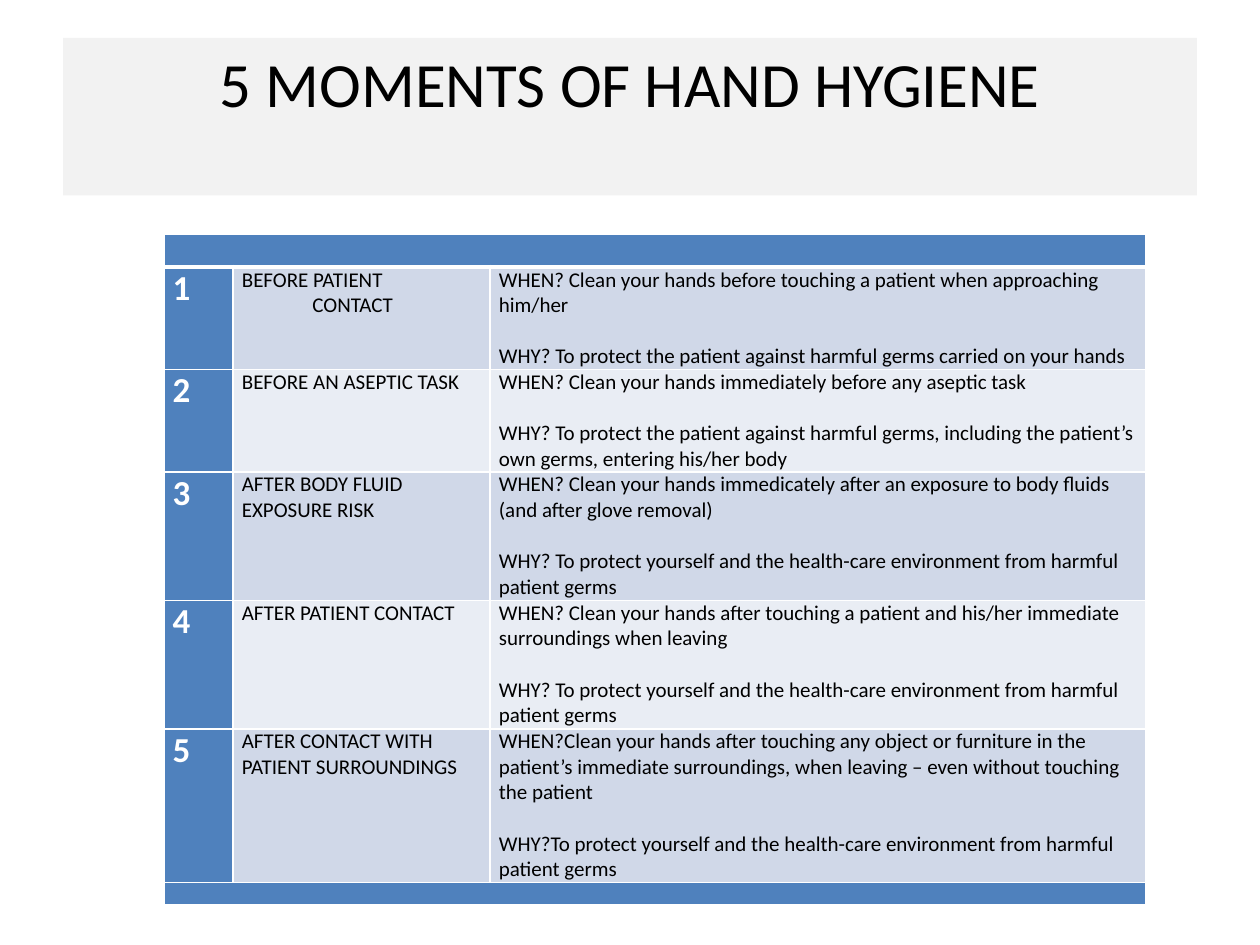
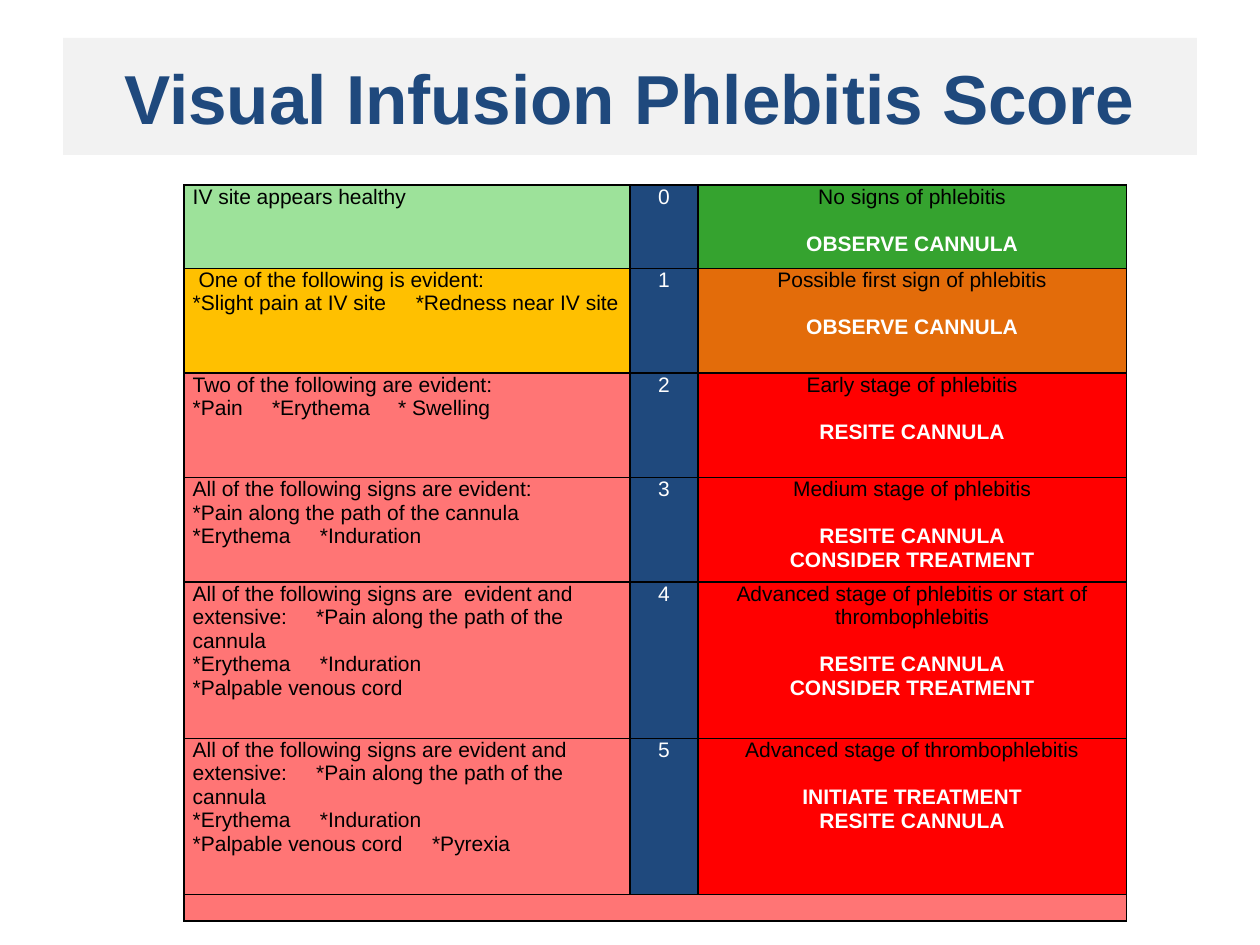
from dataclasses import dataclass

import lxml.etree
import pptx
import pptx.dml.color
import pptx.enum.text
import pptx.oxml.ns
import pptx.util

Inches = pptx.util.Inches
Pt = pptx.util.Pt
qn = pptx.oxml.ns.qn
Align = pptx.enum.text.PP_ALIGN
Anchor = pptx.enum.text.MSO_ANCHOR

COLORS = {
    "black": "000000", "white": "FFFFFF", "band": "F2F2F2",
    "blue": "4F81BD", "row_dark": "D0D8E8", "row_light": "E9EDF4",
    "navy": "1F497D", "light_green": "9DE29A", "green": "35A32F",
    "yellow": "FFC000", "orange": "E36C0A", "pink": "FF7575", "red": "FF0000",
}


@dataclass(frozen=True)
class Line:
    text: str
    color: str = "black"
    size: float = 12
    bold: bool = False
    gap: float = 0
    indent: float = 0
    stops: tuple[float, ...] = ()


@dataclass(frozen=True)
class Cell:
    fill: str
    lines: tuple[Line, ...] = ()
    align: Align = Align.LEFT


@dataclass(frozen=True)
class TableStyle:
    left: float
    top: float
    widths: tuple[float, ...]
    heights: tuple[float, ...]
    font: str
    border: str


@dataclass(frozen=True)
class Title:
    text: str
    height: float
    font: str
    size: float
    color: str
    bold: bool
    anchor: Anchor


def rgb(name: str) -> pptx.dml.color.RGBColor:
    return pptx.dml.color.RGBColor.from_string(COLORS[name])


def set_font(font, name: str, size: float, color: str, bold: bool) -> None:
    font.name, font.size, font.bold = name, Pt(size), bold
    font.color.rgb = rgb(color)


def add_titled_slide(presentation, title: Title):
    slide = presentation.slides.add_slide(presentation.slide_layouts[5])
    shape = slide.shapes.title
    shape.left, shape.top = Inches(0.5), Inches(0.3)
    shape.width, shape.height = Inches(9), Inches(title.height)
    shape.fill.solid()
    shape.fill.fore_color.rgb = rgb("band")
    frame = shape.text_frame
    frame.text = title.text
    frame.auto_size = pptx.enum.text.MSO_AUTO_SIZE.NONE
    frame.vertical_anchor = title.anchor
    paragraph = frame.paragraphs[0]
    paragraph.alignment = Align.CENTER
    set_font(paragraph.font, title.font, title.size, title.color, title.bold)
    return slide


def set_border(cell, side: str, color: str, width: float = 1) -> None:
    properties = cell._tc.get_or_add_tcPr()
    tag = qn(f"a:ln{side}")
    for old_line in properties.findall(tag):
        properties.remove(old_line)
    line = lxml.etree.Element(tag, w=str(Pt(width)))
    fill = lxml.etree.SubElement(line, qn("a:solidFill"))
    lxml.etree.SubElement(fill, qn("a:srgbClr"), val=COLORS[color])
    properties.insert("LRTB".index(side), line)


def write_line(paragraph, line: Line, align: Align, font: str) -> None:
    paragraph.text = line.text
    paragraph.alignment = align
    properties = paragraph._p.get_or_add_pPr()
    if line.indent:
        properties.set("marL", str(Inches(line.indent)))
    if line.stops:
        tabs = lxml.etree.SubElement(properties, qn("a:tabLst"))
        for stop in line.stops:
            lxml.etree.SubElement(tabs, qn("a:tab"), pos=str(Inches(stop)), algn="l")
    if line.gap:
        paragraph.space_before = Pt(line.gap)
    set_font(paragraph.font, font, line.size, line.color, line.bold)


def fill_cell(cell, content: Cell, style: TableStyle) -> None:
    cell.margin_left = cell.margin_right = Inches(0.07)
    cell.margin_top = cell.margin_bottom = 0
    cell.fill.solid()
    cell.fill.fore_color.rgb = rgb(content.fill)
    for side in "LRTB":
        set_border(cell, side, style.border)
    frame = cell.text_frame
    for index, line in enumerate(content.lines):
        paragraph = frame.add_paragraph() if index else frame.paragraphs[0]
        write_line(paragraph, line, content.align, style.font)
    if not content.lines:
        # A small end mark keeps empty rows thin
        lxml.etree.SubElement(frame.paragraphs[0]._p, qn("a:endParaRPr"), sz="800")


def add_table(slide, style: TableStyle, rows: list[list[Cell]]):
    """Draw the rows; a row with a single cell spans all columns."""
    table = slide.shapes.add_table(
        len(rows), len(style.widths), Inches(style.left), Inches(style.top),
        Inches(sum(style.widths)), Inches(sum(style.heights))).table
    table.first_row = table.horz_banding = False
    for column, width in zip(table.columns, style.widths):
        column.width = Inches(width)
    for index, (row, height) in enumerate(zip(rows, style.heights)):
        table.rows[index].height = Inches(height)
        contents = row * len(style.widths) if len(row) == 1 else row
        for column, content in enumerate(contents):
            fill_cell(table.cell(index, column), content, style)
        if len(row) == 1:
            table.cell(index, 0).merge(table.cell(index, len(style.widths) - 1))
    return table


# Slide 1: hand hygiene
HYGIENE_TITLE = Title("5 MOMENTS OF HAND HYGIENE", 1.25, "Calibri", 36,
                      "black", False, Anchor.TOP)
HYGIENE_STYLE = TableStyle(
    1.3, 1.86, (0.55, 2.04, 5.2), (0.26, 0.81, 0.81, 1.02, 1.02, 1.22, 0.18),
    "Calibri", "white")
PROTECT_YOURSELF = ("To protect yourself and the health-care environment "
                    "from harmful patient germs")
MOMENTS = [
    ((Line("BEFORE PATIENT"), Line("CONTACT", indent=0.56)),
     "WHEN? Clean your hands before touching a patient when approaching him/her",
     "WHY? To protect the patient against harmful germs carried on your hands"),
    ((Line("BEFORE AN ASEPTIC TASK"),),
     "WHEN? Clean your hands immediately before any aseptic task",
     "WHY? To protect the patient against harmful germs, including the patient’s "
     "own germs, entering his/her body"),
    ((Line("AFTER BODY FLUID EXPOSURE RISK"),),
     "WHEN? Clean your hands immedicately after an exposure to body fluids "
     "(and after glove removal)",
     "WHY? " + PROTECT_YOURSELF),
    ((Line("AFTER PATIENT CONTACT"),),
     "WHEN? Clean your hands after touching a patient and his/her immediate "
     "surroundings when leaving",
     "WHY? " + PROTECT_YOURSELF),
    ((Line("AFTER CONTACT WITH PATIENT SURROUNDINGS"),),
     "WHEN?Clean your hands after touching any object or furniture in the "
     "patient’s immediate surroundings, when leaving – even without touching "
     "the patient",
     "WHY?" + PROTECT_YOURSELF),
]


def build_hygiene_slide(presentation) -> None:
    slide = add_titled_slide(presentation, HYGIENE_TITLE)
    rows = [[Cell("blue")]]
    for number, (moment, when, why) in enumerate(MOMENTS, 1):
        fill = "row_dark" if number % 2 else "row_light"
        rows.append([
            Cell("blue", (Line(str(number), "white", 20, True),)),
            Cell(fill, moment),
            Cell(fill, (Line(when), Line(why, gap=14.6))),
        ])
    rows.append([Cell("blue")])
    table = add_table(slide, HYGIENE_STYLE, rows)
    for column in range(len(HYGIENE_STYLE.widths)):
        set_border(table.cell(0, column), "B", "white", 3)
        set_border(table.cell(1, column), "T", "white", 3)


# Slide 2: phlebitis score
SCORE_TITLE = Title("Visual Infusion Phlebitis Score", 0.93, "Arial", 39.6,
                    "navy", True, Anchor.MIDDLE)
SCORE_STYLE = TableStyle(
    1.46, 1.47, (3.54, 0.54, 3.4), (0.66, 0.83, 0.83, 0.83, 1.24, 1.24, 0.21),
    "Arial", "black")
ERYTHEMA = Line("*Erythema\t*Induration", stops=(1.01,))
EXTENSIVE = "evident and extensive:\t*Pain along the path of the cannula"
SCORES = [
    ("light_green", (Line("IV site appears healthy"),),
     "green", "No signs of phlebitis", ("OBSERVE CANNULA",)),
    ("yellow", (Line(" One of the following is evident:"),
                Line("*Slight pain at IV site\t*Redness near IV site", stops=(1.77,))),
     "orange", "Possible first sign of phlebitis", ("OBSERVE CANNULA",)),
    ("pink", (Line("Two of the following are evident:"),
              Line("*Pain\t*Erythema\t* Swelling", stops=(0.63, 1.63))),
     "red", "Early stage of phlebitis", ("RESITE CANNULA",)),
    ("pink", (Line("All of the following signs are evident:"),
              Line("*Pain along the path of the cannula"), ERYTHEMA),
     "red", "Medium stage of phlebitis", ("RESITE CANNULA", "CONSIDER TREATMENT")),
    ("pink", (Line("All of the following signs are  " + EXTENSIVE, stops=(0.98,)),
              ERYTHEMA, Line("*Palpable venous cord")),
     "red", "Advanced stage of phlebitis or start of thrombophlebitis",
     ("RESITE CANNULA", "CONSIDER TREATMENT")),
    ("pink", (Line("All of the following signs are " + EXTENSIVE, stops=(0.98,)),
              ERYTHEMA, Line("*Palpable venous cord\t*Pyrexia", stops=(1.9,))),
     "red", "Advanced stage of thrombophlebitis",
     ("INITIATE TREATMENT", "RESITE CANNULA")),
]


def build_score_slide(presentation) -> None:
    slide = add_titled_slide(presentation, SCORE_TITLE)
    rows = []
    for score, (sign_fill, signs, stage_fill, stage, actions) in enumerate(SCORES):
        action_lines = tuple(
            Line(action, "white", bold=True, gap=0 if index else 13.5)
            for index, action in enumerate(actions))
        rows.append([
            Cell(sign_fill, signs),
            Cell("navy", (Line(str(score), "white"),), Align.CENTER),
            Cell(stage_fill, (Line(stage), *action_lines), Align.CENTER),
        ])
    rows.append([Cell("pink")])
    add_table(slide, SCORE_STYLE, rows)


def main() -> None:
    presentation = pptx.Presentation()
    presentation.slide_width, presentation.slide_height = Inches(10), Inches(7.5)
    build_hygiene_slide(presentation)
    build_score_slide(presentation)
    presentation.save("out.pptx")


if __name__ == "__main__":
    main()
